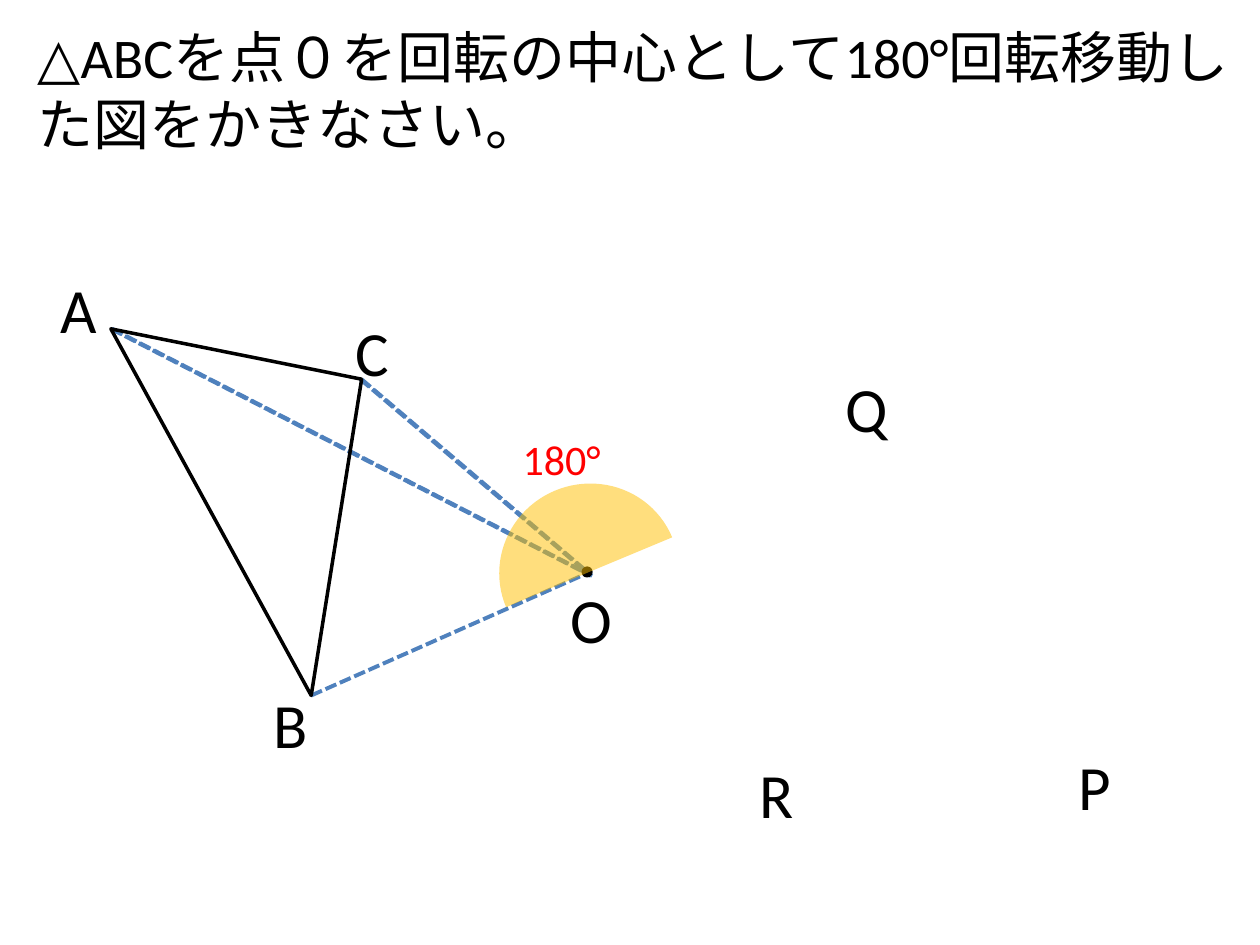
from typing import NamedTuple

from lxml import etree
from pptx import Presentation
from pptx import util as u
from pptx.dml.color import RGBColor
from pptx.enum import dml, shapes, text
from pptx.oxml.ns import qn

COLORS = {"ink": "000000", "ray": "4F81BD", "sector": "FFC000", "angle": "FF0000"}
FONT = "Calibri"


class Point(NamedTuple):
    x: float
    y: float


class Label(NamedTuple):
    name: str
    left: float
    top: float
    width: float


# Triangle vertices
A, B, C = Point(0.88, 2.61), Point(2.47, 5.52), Point(2.87, 3.01)

# Rays to the centre of rotation; those from A and C are doubled
RAYS = [
    (Point(0.89, 2.61), Point(4.7, 4.57)),
    (Point(2.86, 3.01), Point(4.63, 4.52)),
    (A, Point(4.69, 4.57)),
    (C, Point(4.64, 4.52)),
    (B, Point(4.66, 4.55)),
]

LABELS = [
    Label("A", 0.38, 2.1, 0.49),
    Label("R", 5.93, 5.95, 0.48),
    Label("P", 8.46, 5.88, 0.46),
    Label("C", 2.72, 2.44, 0.47),
    Label("B", 2.07, 5.39, 0.48),
    Label("O", 4.43, 4.56, 0.54),
    Label("Q", 6.61, 2.88, 0.54),
]


def rgb(key: str) -> RGBColor:
    return RGBColor.from_string(COLORS[key])


def set_line(sp, key: str, width: float) -> None:
    sp.line.color.rgb = rgb(key)
    sp.line.width = u.Pt(width)


def add_text(s, content: str, left: float, top: float, width: float, height: float,
             *, size: float, color: str = "ink", wrap: bool = True,
             grow: bool = True, before: float = 0) -> None:
    sp = s.shapes.add_textbox(*map(u.Inches, (left, top, width, height)))
    tf = sp.text_frame
    tf.word_wrap = wrap
    tf.auto_size = (text.MSO_AUTO_SIZE.SHAPE_TO_FIT_TEXT if grow
                    else text.MSO_AUTO_SIZE.NONE)
    p = tf.paragraphs[0]
    p.space_before = u.Pt(before)
    r = p.add_run()
    r.text = content
    r.font.name, r.font.size = FONT, u.Pt(size)
    r.font.color.rgb = rgb(color)


def add_ray(s, start: Point, end: Point) -> None:
    sp = s.shapes.add_connector(shapes.MSO_CONNECTOR.STRAIGHT,
                                *map(u.Inches, (*start, *end)))
    set_line(sp, "ray", 2.25)
    sp.line.dash_style = dml.MSO_LINE.SQUARE_DOT
    etree.SubElement(sp._element.spPr, qn("a:effectLst"))


def add_solid(s, kind, left: float, top: float, width: float, height: float, color: str):
    sp = s.shapes.add_shape(kind, *map(u.Inches, (left, top, width, height)))
    sp.shadow.inherit = False
    sp.fill.solid()
    sp.fill.fore_color.rgb = rgb(color)
    return sp


def add_sector(s) -> None:
    sp = add_solid(s, shapes.MSO_SHAPE.PIE, 3.96, 3.84, 1.43, 1.4, "sector")
    sp.adjustments[0], sp.adjustments[1] = 107.918, 0.157
    sp.rotation = 337.1
    sp.line.fill.background()
    clr = sp._element.spPr.find(".//" + qn("a:srgbClr"))
    etree.SubElement(clr, qn("a:alpha"), val="51000")


def add_triangle(s, *corners: Point) -> None:
    first, *rest = [tuple(map(u.Inches, c)) for c in corners]
    fb = s.shapes.build_freeform(*first)
    fb.add_line_segments(rest, close=True)
    sp = fb.convert_to_shape()
    sp.shadow.inherit = False
    sp.fill.background()
    set_line(sp, "ink", 2)


def main() -> None:
    prs = Presentation()
    prs.slide_width, prs.slide_height = u.Inches(10), u.Inches(7.5)
    s = prs.slides.add_slide(prs.slide_layouts[6])

    # Rays and centre point
    for start, end in RAYS:
        add_ray(s, start, end)
    dot = add_solid(s, shapes.MSO_SHAPE.OVAL, 4.63, 4.51, 0.06, 0.06, "ink")
    set_line(dot, "ink", 2)

    # Question
    add_text(s, "△ABCを点０を回転の中心として180°回転移動した図をかきなさい。",
             0.2, 0.13, 9.67, 1.26, size=32, grow=False, before=6.4)

    # Angle sector and triangle
    add_sector(s)
    add_triangle(s, B, C, A)

    # Point names and angle
    for label in LABELS:
        add_text(s, label.name, label.left, label.top, label.width, 0.71,
                 size=36, wrap=False)
    add_text(s, "180°", 4.05, 3.39, 1.15, 0.5, size=24, color="angle")

    prs.save("out.pptx")


if __name__ == "__main__":
    main()
